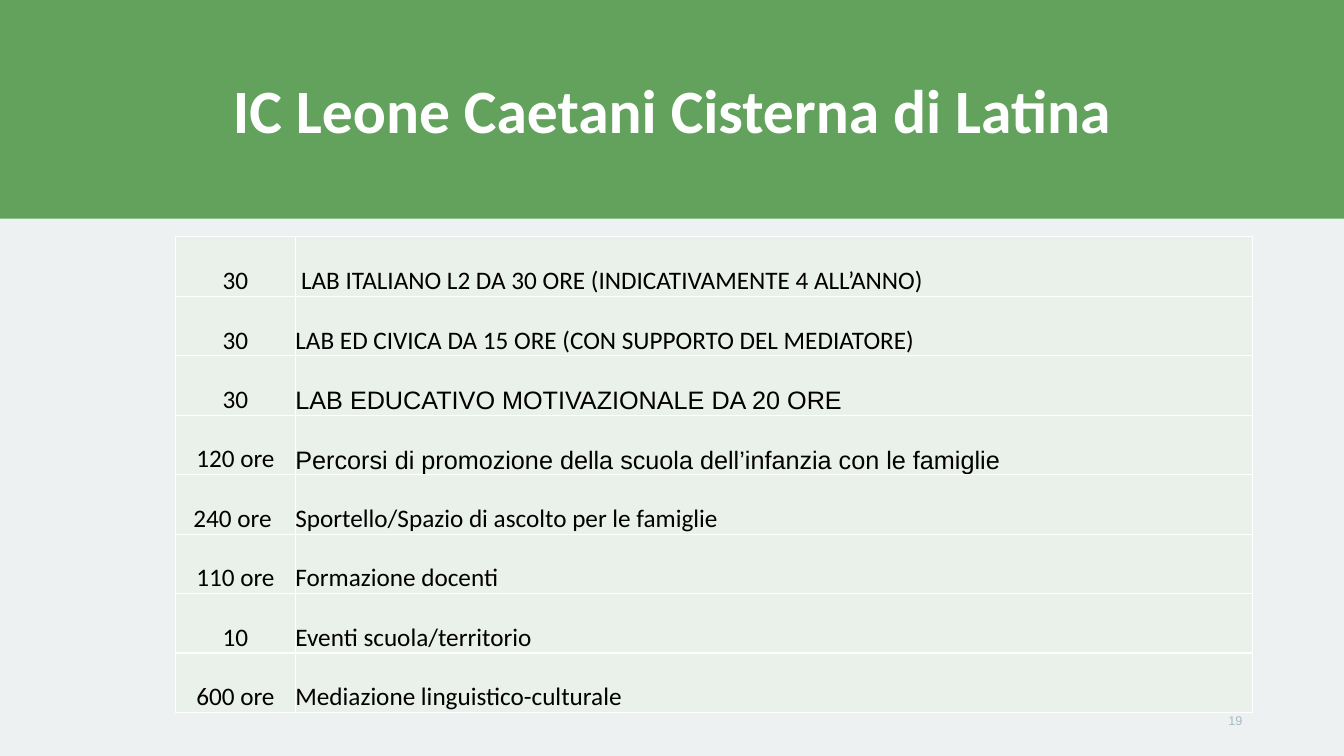
from dataclasses import dataclass

from lxml import etree
from pptx import Presentation
from pptx.dml.color import RGBColor
from pptx.enum.shapes import MSO_SHAPE
from pptx.enum.text import MSO_ANCHOR, PP_ALIGN
from pptx.oxml.ns import qn
from pptx.util import Inches, Pt

RECTANGLE = MSO_SHAPE.RECTANGLE
MIDDLE, BOTTOM = MSO_ANCHOR.MIDDLE, MSO_ANCHOR.BOTTOM
LEFT, CENTER, RIGHT = PP_ALIGN.LEFT, PP_ALIGN.CENTER, PP_ALIGN.RIGHT


@dataclass(frozen=True)
class Theme:
    background: str = "EDF1F2"
    band: str = "62A25D"
    cell: str = "EAF0EA"
    white: str = "FFFFFF"
    ink: str = "000000"
    muted: str = "A7BBC0"
    main_font: str = "Calibri"
    alt_font: str = "Arial"
    title_size: int = 44
    body_size: int = 18
    number_size: int = 9
    border_width: int = 1


THEME = Theme()

TITLE = "IC Leone Caetani Cisterna di Latina"
PAGE_NUMBER = "19"
# hours, activity, font of the activity
ACTIVITIES = [
    ("30", " LAB ITALIANO L2 DA 30 ORE (INDICATIVAMENTE 4 ALL’ANNO)", THEME.main_font),
    ("30", "LAB ED CIVICA DA 15 ORE (CON SUPPORTO DEL MEDIATORE)", THEME.main_font),
    ("30", "LAB EDUCATIVO MOTIVAZIONALE DA 20 ORE", THEME.alt_font),
    ("120 ore", "Percorsi di promozione della scuola dell’infanzia con le famiglie", THEME.alt_font),
    ("240 ore ", "Sportello/Spazio di ascolto per le famiglie", THEME.main_font),
    ("110 ore", "Formazione docenti", THEME.main_font),
    ("10", "Eventi scuola/territorio", THEME.main_font),
    ("600 ore", "Mediazione linguistico-culturale", THEME.main_font),
]

SLIDE_WIDTH, SLIDE_HEIGHT = Inches(13.33), Inches(7.5)
BAND_HEIGHT = Inches(2.17)
TABLE_LEFT, TABLE_TOP = Inches(1.74), Inches(2.35)
COLUMN_WIDTHS = (Inches(1.19), Inches(9.49))
ROW_HEIGHT = Inches(0.59)


def rgb(color):
    return RGBColor.from_string(color)


def write(frame, text, font, size, color, align, bold=False):
    paragraph = frame.paragraphs[0]
    paragraph.alignment = align
    run = paragraph.add_run()
    run.text = text
    run.font.name = font
    run.font.size = Pt(size)
    run.font.bold = bold
    run.font.color.rgb = rgb(color)
    return paragraph


def add_borders(cell):
    properties = cell._tc.get_or_add_tcPr()
    for side in ("a:lnL", "a:lnR", "a:lnT", "a:lnB"):
        line = etree.SubElement(properties, qn(side), w=str(Pt(THEME.border_width)))
        fill = etree.SubElement(line, qn("a:solidFill"))
        etree.SubElement(fill, qn("a:srgbClr"), val=THEME.white)


def format_cell(cell, text, font, align):
    add_borders(cell)
    cell.fill.solid()
    cell.fill.fore_color.rgb = rgb(THEME.cell)
    cell.margin_left = cell.margin_right = cell.margin_top = cell.margin_bottom = 0
    cell.vertical_anchor = BOTTOM
    write(cell.text_frame, text, font, THEME.body_size, THEME.ink, align)


def add_header(slide):
    band = slide.shapes.add_shape(RECTANGLE, 0, 0, SLIDE_WIDTH, BAND_HEIGHT)
    band.shadow.inherit = False
    band.fill.solid()
    band.fill.fore_color.rgb = rgb(THEME.band)
    band.line.fill.background()

    title = slide.shapes.title
    title.element.addprevious(band.element)
    title.left, title.top = Inches(0.92), Inches(0.4)
    title.width, title.height = Inches(11.5), Inches(1.45)
    title.text_frame.vertical_anchor = MIDDLE
    heading = write(title.text_frame, TITLE, THEME.main_font, THEME.title_size,
                    THEME.white, CENTER, bold=True)
    heading.line_spacing = 0.9


def add_page_number(slide):
    box = slide.shapes.add_textbox(Inches(9.42), Inches(6.95), Inches(3), Inches(0.4))
    box.text_frame.word_wrap = True
    box.text_frame.vertical_anchor = MIDDLE
    write(box.text_frame, PAGE_NUMBER, THEME.alt_font, THEME.number_size,
          THEME.muted, RIGHT)


def add_activities(slide):
    table = slide.shapes.add_table(
        len(ACTIVITIES), len(COLUMN_WIDTHS), TABLE_LEFT, TABLE_TOP,
        sum(COLUMN_WIDTHS), ROW_HEIGHT * len(ACTIVITIES)).table
    table.first_row = table.horz_banding = False
    for column, width in zip(table.columns, COLUMN_WIDTHS):
        column.width = width
    for row, (hours, activity, activity_font) in zip(table.rows, ACTIVITIES):
        row.height = ROW_HEIGHT
        hours_cell, activity_cell = row.cells
        format_cell(hours_cell, hours, THEME.main_font, CENTER)
        format_cell(activity_cell, activity, activity_font, LEFT)


def main():
    deck = Presentation()
    deck.slide_width, deck.slide_height = SLIDE_WIDTH, SLIDE_HEIGHT
    slide = deck.slides.add_slide(deck.slide_layouts.get_by_name("Title Only"))
    slide.background.fill.solid()
    slide.background.fill.fore_color.rgb = rgb(THEME.background)
    add_header(slide)
    add_page_number(slide)
    add_activities(slide)
    deck.save("out.pptx")


if __name__ == "__main__":
    main()
